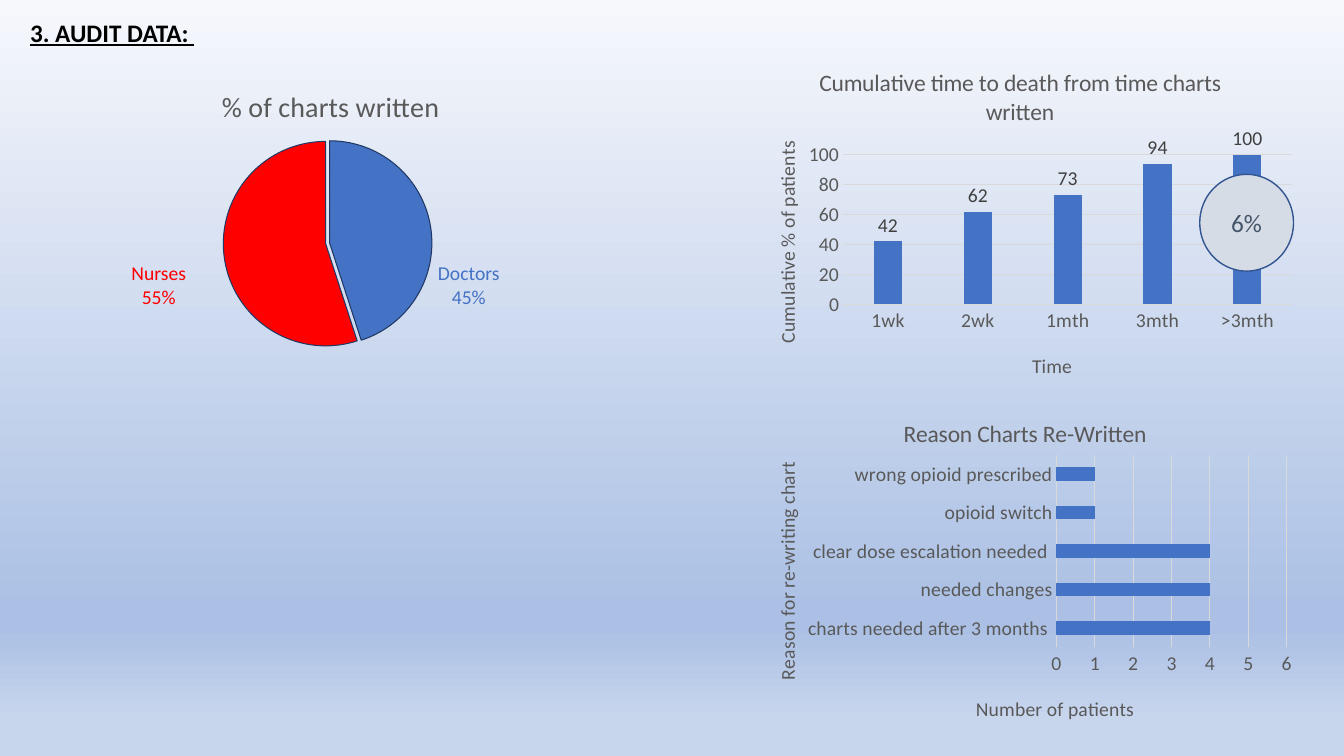
from copy import deepcopy

from lxml.etree import SubElement
from pptx import Presentation
from pptx.chart.data import CategoryChartData
from pptx.dml.color import RGBColor
from pptx.enum.chart import XL_CHART_TYPE, XL_LABEL_POSITION, XL_TICK_MARK
from pptx.enum.shapes import MSO_SHAPE
from pptx.enum.text import MSO_ANCHOR, PP_ALIGN
from pptx.oxml.ns import qn
from pptx.util import Inches, Pt

FONT = "Calibri"
BLACK = RGBColor(0x00, 0x00, 0x00)
GREY = RGBColor(0x59, 0x59, 0x59)
DARK_GREY = RGBColor(0x40, 0x40, 0x40)
GRID = RGBColor(0xD9, 0xD9, 0xD9)
BLUE = RGBColor(0x44, 0x72, 0xC4)
RED = RGBColor(0xFF, 0x00, 0x00)
NAVY = RGBColor(0x20, 0x38, 0x64)
CALLOUT_FILL = RGBColor(0xD6, 0xDC, 0xE5)
CALLOUT_LINE = RGBColor(0x32, 0x54, 0x91)
SLATE = RGBColor(0x44, 0x54, 0x6A)
BACKDROP = [
    (0, RGBColor(0xF6, 0xF8, 0xFC)),
    (0.81, RGBColor(0xAB, 0xC0, 0xE4)),
    (0.83, RGBColor(0xAB, 0xC0, 0xE4)),
    (0.95, RGBColor(0xC7, 0xD5, 0xED)),
]


def style_font(font, size, color):
    """Set typeface, size and colour."""
    font.name, font.size = FONT, Pt(size)
    font.color.rgb = color


def paint_backdrop(slide):
    """Fill the background with a top-to-bottom gradient."""
    fill = slide.background.fill
    fill.gradient()
    fill.gradient_angle = 270
    stop_list = slide._element.xpath(".//a:gsLst")[0]
    for _ in BACKDROP[2:]:
        stop_list.append(deepcopy(stop_list[0]))
    for stop, (position, color) in zip(fill.gradient_stops, BACKDROP):
        stop.position = position
        stop.color.rgb = color


def place(element, index, *shares):
    """Give a chart part its place as shares of the chart's size."""
    for previous in element.findall(qn("c:layout")):
        element.remove(previous)
    layout = element.makeelement(qn("c:layout"))
    element.insert(index, layout)
    manual = SubElement(layout, qn("c:manualLayout"))
    if len(shares) == 4:
        SubElement(manual, qn("c:layoutTarget")).set("val", "inner")
    for mode in ("xMode", "yMode"):
        SubElement(manual, qn(f"c:{mode}")).set("val", "edge")
    for key, share in zip("xywh", shares):
        SubElement(manual, qn(f"c:{key}")).set("val", str(share))


def write_title(title, text, size, spot, vertical=False):
    """Write a chart or axis title at a spot in the chart."""
    frame = title.text_frame
    frame.text = text
    font = frame.paragraphs[0].font
    style_font(font, size, GREY)
    font.bold = False
    if vertical:
        frame._txBody.bodyPr.set("rot", "-5400000")
        frame._txBody.bodyPr.set("vert", "horz")
    place(title._element, 1, *spot)


def add_chart(slide, box, kind, categories, name, values, title, size, spot, plot_box):
    """Add a titled chart with one series."""
    data = CategoryChartData()
    data.categories = categories
    data.add_series(name, values)
    chart = slide.shapes.add_chart(kind, *map(Inches, box), data).chart
    style_font(chart.font, 14, BLACK)
    chart.has_legend = False
    chart.has_title = True
    write_title(chart.chart_title, title, size, spot)
    place(chart._chartSpace.chart.plotArea, 0, *plot_box)
    return chart


def style_bars(chart, gap, top, step, category_title, value_title):
    """Style the bars and both axes; a title is text, spot and direction."""
    plot = chart.plots[0]
    plot.gap_width = gap
    plot.vary_by_categories = False
    fill = plot.series[0].format.fill
    fill.solid()
    fill.fore_color.rgb = BLUE
    for axis, (text, spot, vertical) in (
        (chart.category_axis, category_title),
        (chart.value_axis, value_title),
    ):
        axis.major_tick_mark = axis.minor_tick_mark = XL_TICK_MARK.NONE
        style_font(axis.tick_labels.font, 14, GREY)
        axis.has_title = True
        write_title(axis.axis_title, text, 14, spot, vertical)
    category_line = chart.category_axis.format.line
    category_line.color.rgb = GRID
    category_line.width = Pt(0.75)
    values = chart.value_axis
    values.minimum_scale, values.maximum_scale, values.major_unit = 0, top, step
    values.format.line.fill.background()
    values.has_major_gridlines = True
    values.major_gridlines.format.line.color.rgb = GRID
    values.major_gridlines.format.line.width = Pt(0.75)


def add_text(slide, box, lines, size, color, align=PP_ALIGN.LEFT):
    """Add a text box and return its paragraphs."""
    frame = slide.shapes.add_textbox(*map(Inches, box)).text_frame
    frame.word_wrap = True
    frame.text = "\n".join(lines)
    for paragraph in frame.paragraphs:
        paragraph.alignment = align
        style_font(paragraph.font, size, color)
    return frame.paragraphs


def add_heading(slide, box):
    """Add the underlined slide heading."""
    heading = add_text(slide, box, ["3. AUDIT DATA: "], 18, BLACK)[0]
    heading.font.bold = heading.font.underline = True


def add_authors(slide, box):
    """Add the pie of who wrote the charts, with a label on each side."""
    left, top, width, height = box
    authors = [("Doctors", 45, BLUE, 0.78), ("Nurses", 55, RED, 0.165)]
    chart = add_chart(
        slide, box, XL_CHART_TYPE.PIE, ["1", "2"], "Series 1",
        [share for _, share, _, _ in authors],
        "% of charts written", 20, (0.28, 0.07), (0.29, 0.26, 0.42, 0.69),
    )
    series = chart.plots[0].series[0]
    explosion = series._element.makeelement(qn("c:explosion"), {"val": "2"})
    series.format.line.color.rgb = NAVY
    series._element.find(qn("c:spPr")).addnext(explosion)
    for index, (author, share, color, center) in enumerate(authors):
        part = series.points[index].format
        part.fill.solid()
        part.fill.fore_color.rgb = color
        part.line.color.rgb = NAVY
        part.line.width = Pt(0.75)
        label_box = (left + center * width - 0.5, top + 0.647 * height, 1, 0.57)
        add_text(slide, label_box, [author, f"{share}%"], 14, color, PP_ALIGN.CENTER)


def add_survival(slide, box):
    """Add the cumulative columns and the callout on the last one."""
    left, top, width, height = box
    chart = add_chart(
        slide, box, XL_CHART_TYPE.COLUMN_CLUSTERED,
        ["1wk", "2wk", "1mth", "3mth", ">3mth"], "Series 1", [42, 62, 73, 94, 100],
        "Cumulative time to death from time charts written", 16.8,
        (0.13, 0.03), (0.18, 0.3, 0.8, 0.44),
    )
    style_bars(chart, 219, 100, 20, ("Time", (0.51, 0.87), False),
               ("Cumulative % of patients", (0.05, 0.25), True))
    chart.plots[0].overlap = -27
    labels = chart.plots[0].series[0].data_labels
    labels.show_value = True
    labels.position = XL_LABEL_POSITION.OUTSIDE_END
    labels.number_format, labels.number_format_is_linked = "0", False
    style_font(labels.font, 14, DARK_GREY)

    callout = slide.shapes.add_shape(
        MSO_SHAPE.OVAL, Inches(left + 0.815 * width), Inches(top + 0.358 * height),
        Inches(0.93), Inches(0.96))
    callout.shadow.inherit = False
    callout.fill.solid()
    callout.fill.fore_color.rgb = CALLOUT_FILL
    callout.line.color.rgb = CALLOUT_LINE
    callout.line.width = Pt(1)
    frame = callout.text_frame
    frame.text = "6%"
    frame.vertical_anchor = MSO_ANCHOR.MIDDLE
    frame.paragraphs[0].alignment = PP_ALIGN.CENTER
    style_font(frame.paragraphs[0].font, 18, SLATE)


def add_reasons(slide, box):
    """Add the bars of reasons for re-writing."""
    title = "Reason Charts Re-Written"
    reasons = ["charts needed after 3 months ", "needed changes",
               "clear dose escalation needed ", "opioid switch", "wrong opioid prescribed"]
    chart = add_chart(slide, box, XL_CHART_TYPE.BAR_CLUSTERED, reasons, title,
                      [4, 4, 4, 1, 1], title, 16.8, (0.28, 0.06), (0.56, 0.18, 0.41, 0.56))
    style_bars(chart, 182, 6, 1, ("Reason for re-writing chart", (0.05, 0.19), True),
               ("Number of patients", (0.41, 0.87), False))


def main():
    """Build and save the slide."""
    deck = Presentation()
    deck.slide_width, deck.slide_height = Inches(13.33), Inches(7.5)
    slide = deck.slides.add_slide(deck.slide_layouts[6])
    paint_backdrop(slide)
    add_authors(slide, (0.75, 0.6, 5, 3))
    add_heading(slide, (0.2, 0.12, 2.2, 0.4))
    add_reasons(slide, (7.36, 3.9, 5.57, 3.41))
    add_survival(slide, (7.36, 0.52, 5.57, 3.38))
    deck.save("out.pptx")


if __name__ == "__main__":
    main()
